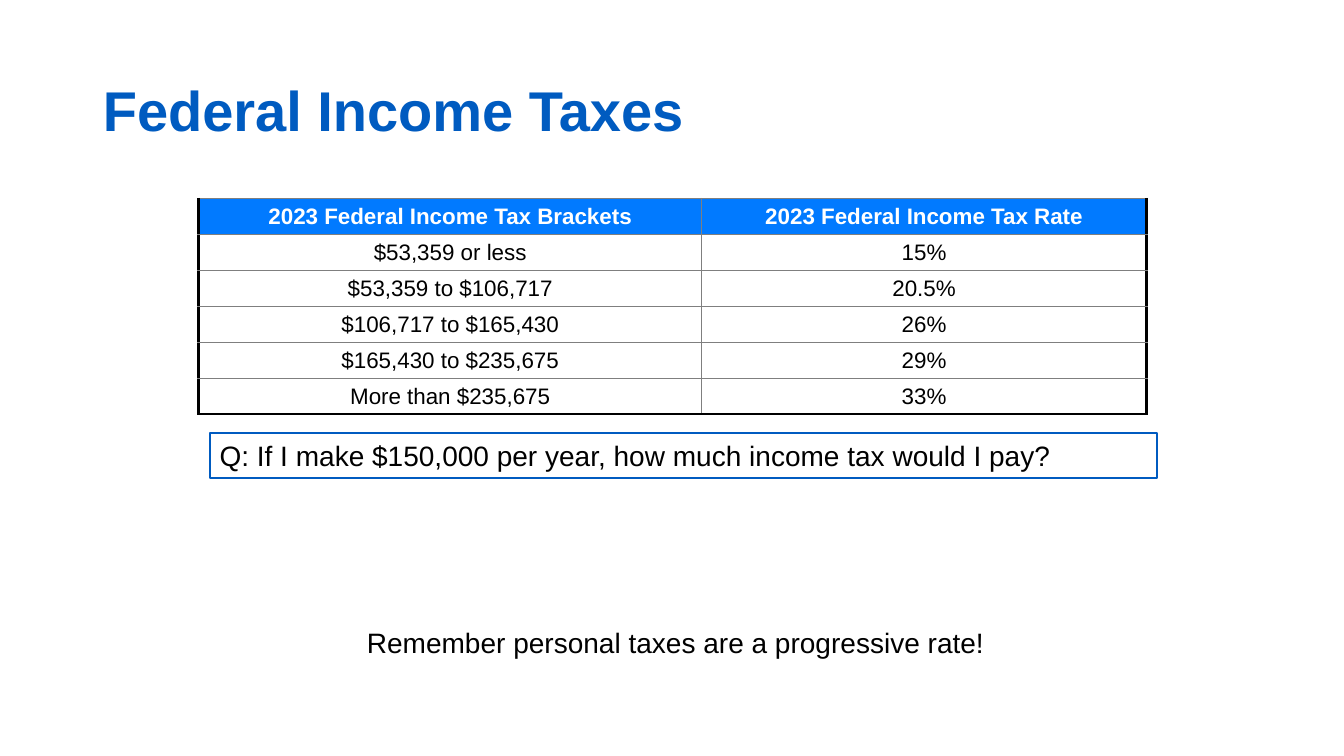
from dataclasses import dataclass
from lxml import etree
from pptx import Presentation
from pptx import util as u
from pptx.dml.color import RGBColor
from pptx.enum import shapes, text
from pptx.oxml import ns


@dataclass(frozen=True)
class Theme:
    font: str = "Arial"
    blue: str = "005BC0"
    head: str = "017AFF"
    ink: str = "000000"
    grid: str = "7F7F7F"
    white: str = "FFFFFF"
    title: int = 40
    body: int = 20
    cell: int = 16


look = Theme()
px = 9144


def style(par, size, color, bold=False, align=text.PP_ALIGN.LEFT):
    par.alignment = align
    font = par.font
    font.name = look.font
    font.size = u.Pt(size)
    font.bold = bold
    font.color.rgb = RGBColor.from_string(color)


def edge(cell, side, color, width):
    props = cell._tc.get_or_add_tcPr()
    line = etree.SubElement(props, ns.qn("a:ln" + side), w=str(u.Pt(width)))
    fill = etree.SubElement(line, ns.qn("a:solidFill"))
    etree.SubElement(fill, ns.qn("a:srgbClr"), val=color)


deck = Presentation()
deck.slide_width = 1333 * px
deck.slide_height = 750 * px
slide = deck.slides.add_slide(deck.slide_layouts[5])

title = slide.shapes.title
title.left, title.top, title.width, title.height = (
    n * px for n in (92, 40, 1150, 145))
frame = title.text_frame
frame.text = "Federal Income Taxes"
frame.auto_size = text.MSO_AUTO_SIZE.NONE
frame.vertical_anchor = text.MSO_ANCHOR.MIDDLE
frame.paragraphs[0].line_spacing = 0.9
style(frame.paragraphs[0], look.title, look.blue, True)

rates = [
    ("2023 Federal Income Tax Brackets", "2023 Federal Income Tax Rate"),
    ("$53,359 or less", "15%"),
    ("$53,359 to $106,717", "20.5%"),
    ("$106,717 to $165,430", "26%"),
    ("$165,430 to $235,675", "29%"),
    ("More than $235,675", "33%"),
]
count = len(rates)
grid = slide.shapes.add_table(
    count, 2, 197 * px, 197 * px, 940 * px, 214 * px).table
grid.horz_banding = False
for col, width in zip(grid.columns, (499, 441)):
    col.width = width * px

thin = (look.grid, 1)
thick = (look.ink, 2.25)
for r, row in enumerate(rates):
    grid.rows[r].height = 214 * px // count
    for c, label in enumerate(row):
        cell = grid.cell(r, c)
        cell.text = label
        cell.vertical_anchor = text.MSO_ANCHOR.MIDDLE
        cell.margin_left = cell.margin_right = cell.margin_top = px
        cell.margin_bottom = 0
        edge(cell, "L", *(thick if c == 0 else thin))
        edge(cell, "R", *(thick if c == 1 else thin))
        edge(cell, "T", *thin)
        edge(cell, "B", *(thick if r == count - 1 else thin))
        if r == 0:
            cell.fill.solid()
            cell.fill.fore_color.rgb = RGBColor.from_string(look.head)
        else:
            cell.fill.background()
        style(cell.text_frame.paragraphs[0], look.cell,
              look.ink if r else look.white, r == 0, text.PP_ALIGN.CENTER)

ask = slide.shapes.add_shape(
    shapes.MSO_SHAPE.RECTANGLE, 208 * px, 430 * px, 940 * px, 44 * px)
ask.shadow.inherit = False
ask.fill.background()
ask.line.color.rgb = RGBColor.from_string(look.blue)
ask.line.width = u.Pt(1.5)
note = slide.shapes.add_textbox(354 * px, 616 * px, 667 * px, 44 * px)

for box, words in (
    (ask, "Q: If I make $150,000 per year, how much income tax would I pay?"),
    (note, "Remember personal taxes are a progressive rate!"),
):
    frame = box.text_frame
    frame.text = words
    frame.word_wrap = True
    frame.auto_size = text.MSO_AUTO_SIZE.SHAPE_TO_FIT_TEXT
    frame.vertical_anchor = text.MSO_ANCHOR.TOP
    style(frame.paragraphs[0], look.body, look.ink)

deck.save("out.pptx")
